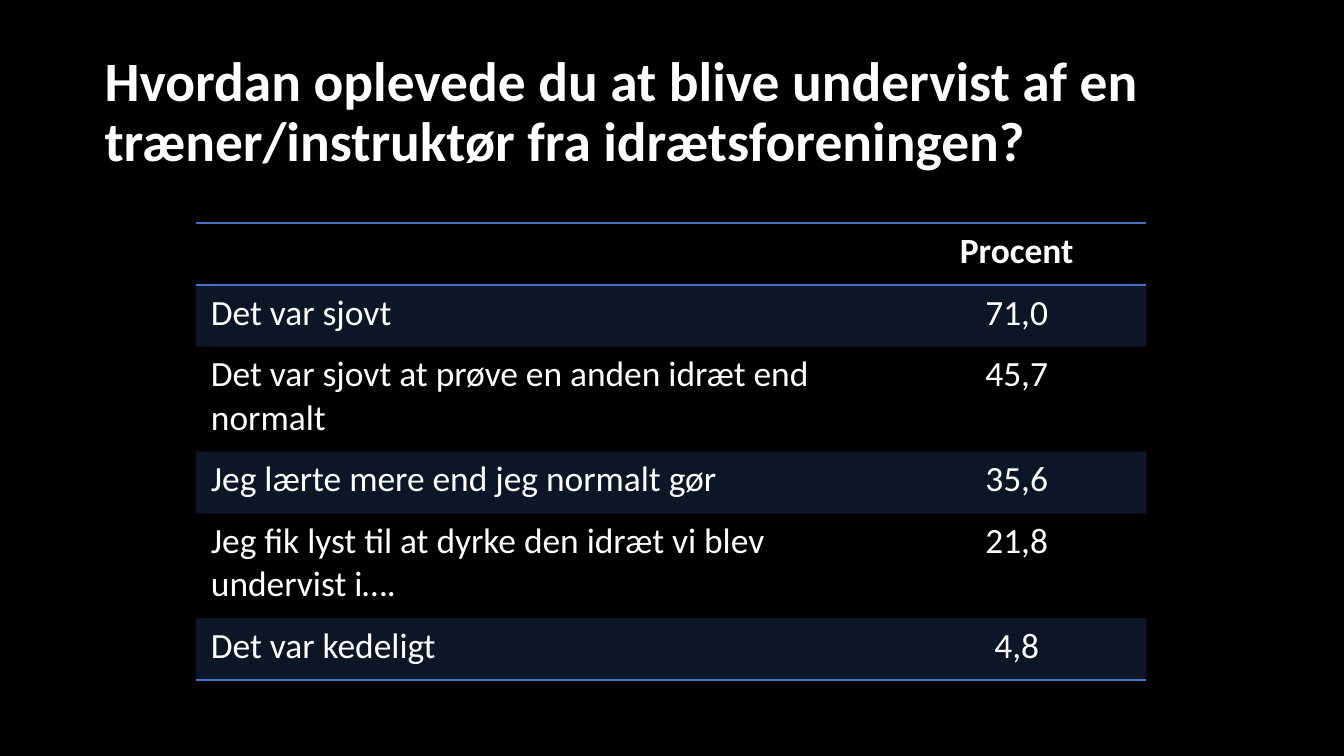
from dataclasses import dataclass

from lxml import etree
from pptx import Presentation
from pptx.dml.color import RGBColor
from pptx.enum import text
from pptx.oxml.ns import qn
from pptx.util import Inches, Pt


@dataclass(frozen=True)
class Theme:
    font: str = "Calibri"
    back: str = "000000"
    ink: str = "FFFFFF"
    blue: str = "4472C4"
    band: int = 20
    title: float = 29.7
    body: float = 19


THEME = Theme()
PLAIN = "{2D5ABB26-0587-4C30-8999-92F81FD0307C}"
TITLE = "Hvordan oplevede du at blive undervist af en træner/instruktør fra idrætsforeningen?"
ROWS = [
    ("", "Procent", 0.46),
    ("Det var sjovt", "71,0", 0.46),
    ("Det var sjovt at prøve en anden idræt end normalt", "45,7", 0.78),
    ("Jeg lærte mere end jeg normalt gør", "35,6", 0.46),
    ("Jeg fik lyst til at dyrke den idræt vi blev undervist i….", "21,8", 0.78),
    ("Det var kedeligt", "4,8", 0.46),
]


def style(para, size, bold=False):
    font = para.font
    font.name, font.size, font.bold = THEME.font, Pt(size), bold
    font.color.rgb = RGBColor.from_string(THEME.ink)


def add_title(slide, left, top, width, height):
    box = slide.shapes.add_textbox(*map(Inches, (left, top, width, height)))
    frame = box.text_frame
    frame.word_wrap = True
    frame.vertical_anchor = text.MSO_ANCHOR.MIDDLE
    para = frame.paragraphs[0]
    para.text = TITLE
    para.line_spacing = 0.9
    style(para, THEME.title, True)


def add_edge(cell, side):
    props = cell._tc.get_or_add_tcPr()
    line = etree.SubElement(props, qn(f"a:ln{side}"), w=str(Pt(1)))
    fill = etree.SubElement(line, qn("a:solidFill"))
    etree.SubElement(fill, qn("a:srgbClr"), val=THEME.blue)


def add_band(cell):
    cell.fill.solid()
    cell.fill.fore_color.rgb = RGBColor.from_string(THEME.blue)
    color = cell._tc.tcPr.find(qn("a:solidFill")).find(qn("a:srgbClr"))
    etree.SubElement(color, qn("a:alpha"), val=str(THEME.band * 1000))


def fill_cell(cell, words, row, col):
    cell.margin_left = cell.margin_right = Inches(0.11)
    cell.margin_top = cell.margin_bottom = Inches(0.05)
    para = cell.text_frame.paragraphs[0]
    if words:
        para.text = words
    if col == 1:
        para.alignment = text.PP_ALIGN.CENTER
    style(para, THEME.body, row == 0)
    if row == 0:
        add_edge(cell, "T")
    if row in (0, len(ROWS) - 1):
        add_edge(cell, "B")
    if row % 2:
        add_band(cell)
    else:
        cell.fill.background()


def add_answers(slide, left, top, width, height):
    frame = slide.shapes.add_table(
        len(ROWS), 2, *map(Inches, (left, top, width, height))
    )
    table = frame.table
    table.horz_banding = False
    table._tbl.tblPr.find(qn("a:tableStyleId")).text = PLAIN
    share = 1.93
    table.columns[0].width = Inches(width - share)
    table.columns[1].width = Inches(share)
    for row, (label, value, tall) in enumerate(ROWS):
        table.rows[row].height = Inches(tall)
        for col, words in enumerate((label, value)):
            fill_cell(table.cell(row, col), words, row, col)


def main():
    deck = Presentation()
    deck.slide_width = Inches(10)
    deck.slide_height = Inches(10 * 9 / 16)
    slide = deck.slides.add_slide(deck.slide_layouts[6])
    slide.background.fill.solid()
    slide.background.fill.fore_color.rgb = RGBColor.from_string(THEME.back)
    add_title(slide, 0.68, 0.3, 8.63, 1.09)
    add_answers(slide, 1.46, 1.66, 7.07, 3.41)
    deck.save("out.pptx")


if __name__ == "__main__":
    main()
